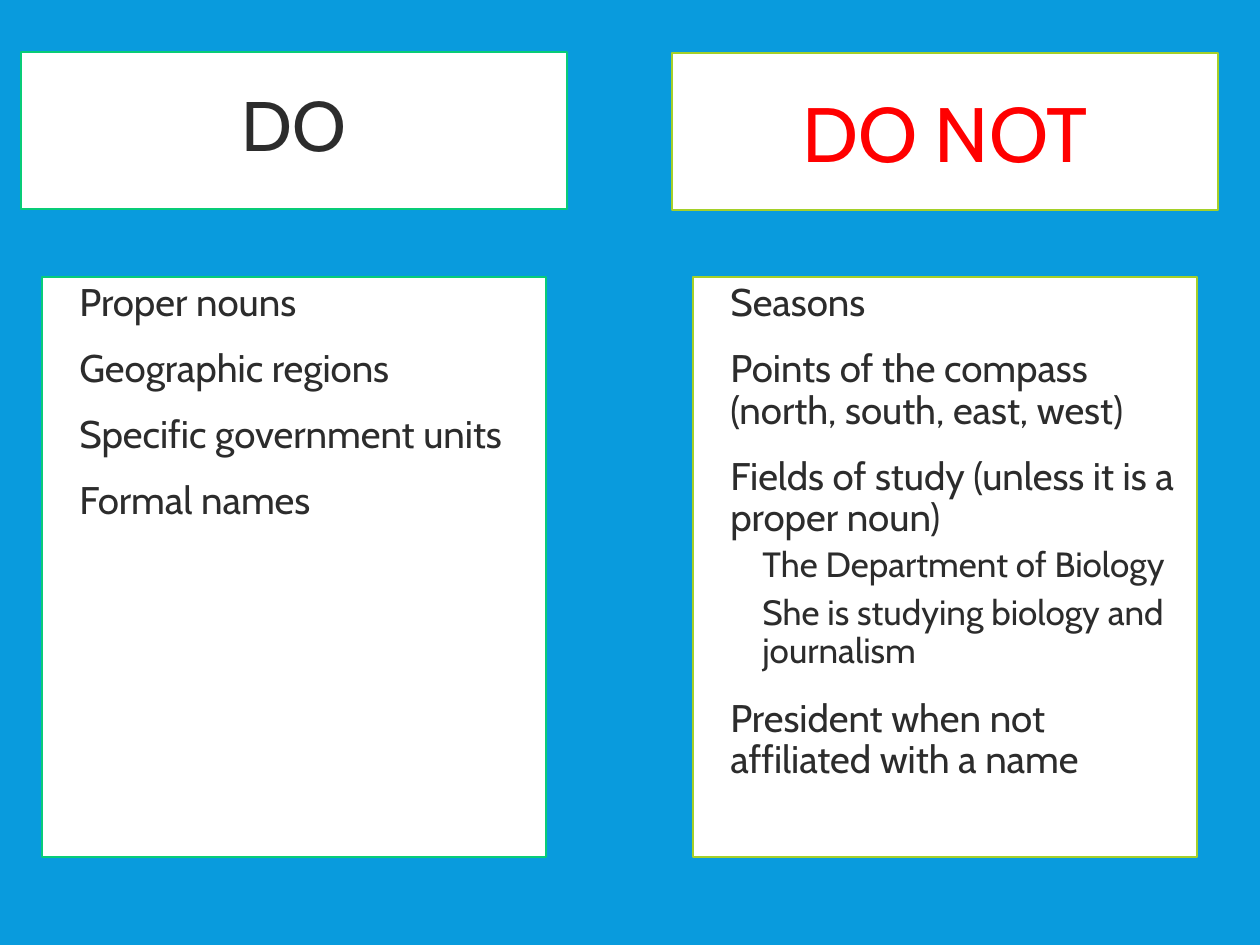
from pptx import Presentation
from pptx.dml.color import RGBColor
from pptx.enum.shapes import MSO_SHAPE as Shape
from pptx.enum.text import MSO_ANCHOR as Anchor, MSO_AUTO_SIZE as Fit, PP_ALIGN as Align
from pptx.util import Emu, Pt

SCALE = 914400 / 126
BLUE, WHITE, INK, RED = "099BDD", "FFFFFF", "2C2C2C", "FF0000"
GREEN, LIME = "08CC78", "A5D028"

# Content: (level, text)
DO = [
    (0, "Proper nouns"),
    (0, "Geographic regions"),
    (0, "Specific government units"),
    (0, "Formal names"),
]
DO_NOT = [
    (0, "Seasons"),
    (0, "Points of the compass (north, south, east, west)"),
    (0, "Fields of study (unless it is a proper noun)"),
    (1, "The Department of Biology"),
    (1, "She is studying biology and journalism"),
    (0, "President when not affiliated with a name"),
]
# Per level: size, space before, space after (pt), left margin (px)
LEVELS = [(22, 12, 2, 25), (20, 2, 4, 57)]

# Layout in px
HEAD_W, HEAD_H = 546, 157
LIST_W, LIST_H, LIST_TOP = 504, 580, 277
INSET = (HEAD_W - LIST_W) // 2


def px(n):
    return Emu(round(n * SCALE))


def rgb(code):
    return RGBColor.from_string(code)


def place(box, x, y, w, h, edge):
    box.left, box.top, box.width, box.height = map(px, (x, y, w, h))
    box.fill.solid()
    box.fill.fore_color.rgb = rgb(WHITE)
    box.line.color.rgb = rgb(edge)
    box.line.width = Pt(1)


def add_rect():
    box = slide.shapes.add_shape(Shape.RECTANGLE, 0, 0, 0, 0)
    box.shadow.inherit = False
    return box


def style(para, size, color, align, lead):
    para.font.name = "Cabin"
    para.font.size = Pt(size)
    para.font.color.rgb = rgb(color)
    para.alignment = align
    para.line_spacing = lead


def fill_head(box, x, y, edge, text, size, color, lead):
    place(box, x, y, HEAD_W, HEAD_H, edge)
    frame = box.text_frame
    frame.text = text
    frame.word_wrap = True
    frame.auto_size = Fit.NONE
    frame.vertical_anchor = Anchor.MIDDLE
    style(frame.paragraphs[0], size, color, Align.CENTER, lead)


def add_list(x, edge, items):
    box = add_rect()
    place(box, x, LIST_TOP, LIST_W, LIST_H, edge)
    frame = box.text_frame
    frame.word_wrap = True
    frame.vertical_anchor = Anchor.TOP
    for i, (level, text) in enumerate(items):
        para = frame.add_paragraph() if i else frame.paragraphs[0]
        size, before, after, margin = LEVELS[level]
        para.text = text
        para.level = level
        style(para, size, INK, Align.LEFT, 0.9)
        para.space_before, para.space_after = Pt(before), Pt(after)
        props = para._p.get_or_add_pPr()
        props.set("marL", str(px(margin)))
        props.set("indent", "0")


# Slide and background
prs = Presentation()
prs.slide_width, prs.slide_height = px(1260), px(945)
slide = prs.slides.add_slide(prs.slide_layouts[5])
slide.background.fill.solid()
slide.background.fill.fore_color.rgb = rgb(BLUE)

# Columns: box, left, top, edge, heading, size, color, line spacing, list
columns = [
    (slide.shapes.title, 21, 52, GREEN, "DO", 40, INK, 0.85, DO),
    (add_rect(), 672, 53, LIME, "DO NOT", 44, RED, 1.0, DO_NOT),
]
for box, x, y, edge, text, size, color, lead, items in columns:
    fill_head(box, x, y, edge, text, size, color, lead)
    add_list(x + INSET, edge, items)

prs.save("out.pptx")
